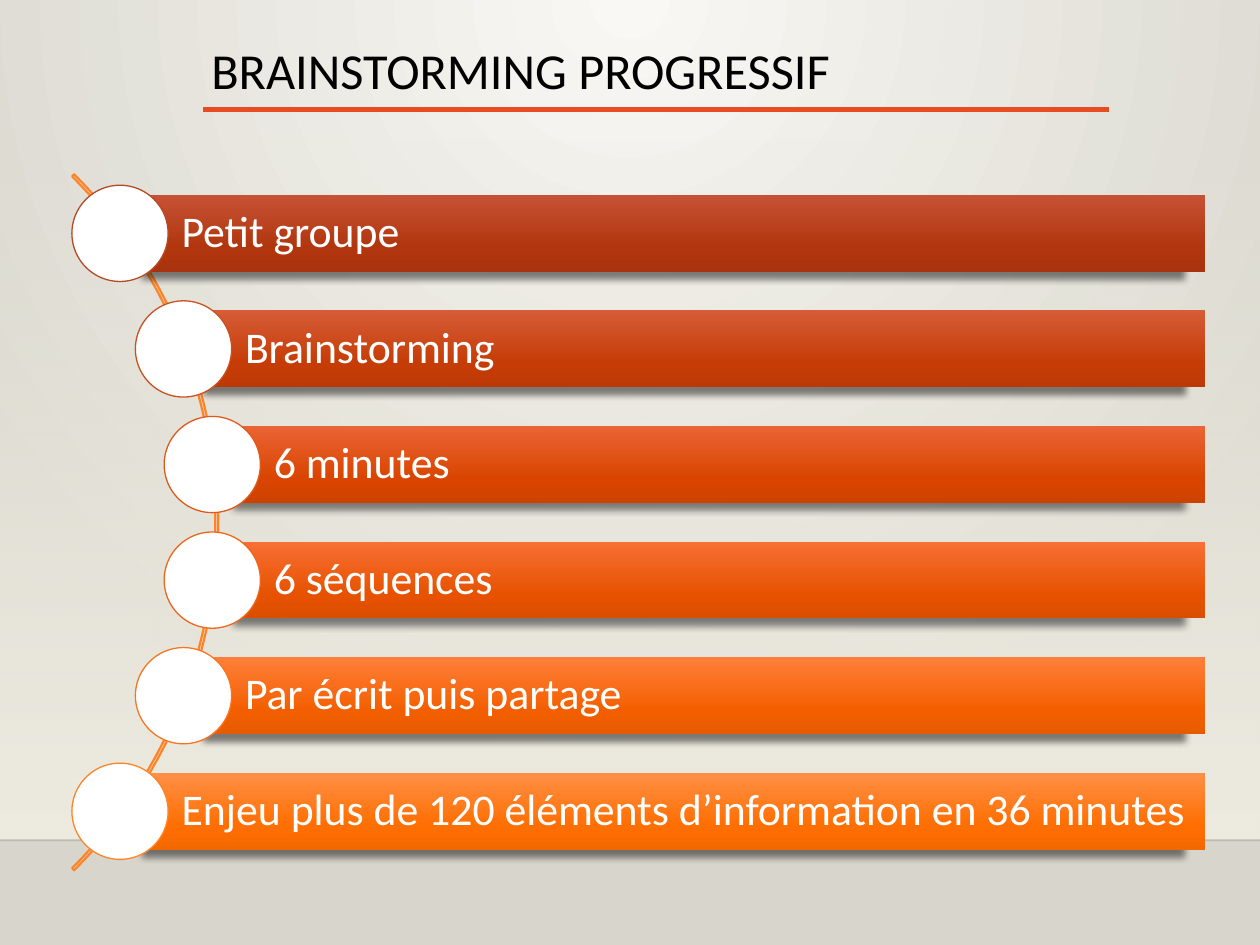
from lxml import etree
from pptx import Presentation
from pptx import util as u
from pptx.dml.color import RGBColor
from pptx.enum import shapes, text
from pptx.oxml import parse_xml
from pptx.oxml.ns import qn, nsdecls

COLOURS = {"white": "FFFFFF", "black": "000000", "rule": "E84C22", "horizon": "000001",
           "glow": "F9F8F5", "edge": "D8D6CC", "wall": "EEECE1", "arc": "FF8427"}
RADIAL = '<a:path path="circle"><a:fillToRect l="43000" r="43000" b="100000"/></a:path>'
DOWN = '<a:lin ang="5400000" scaled="0"/>'


def set_gradient(properties, stops, direction):
    """Swap the empty fill for a gradient of (position, colour, opacity) stops."""
    steps = "".join(
        f'<a:gs pos="{pos * 1000}"><a:srgbClr val="{colour}">'
        f'<a:alpha val="{opacity * 1000}"/></a:srgbClr></a:gs>'
        for pos, colour, opacity in stops)
    gradient = parse_xml(f'<a:gradFill {nsdecls("a")} rotWithShape="1">'
                         f'<a:gsLst>{steps}</a:gsLst>{direction}</a:gradFill>')
    properties.replace(properties.find(qn("a:noFill")), gradient)


def write(frame, words, size, colour, insets):
    """Put one left-aligned, vertically centred line into a text frame."""
    layout = {"word_wrap": True, "auto_size": text.MSO_AUTO_SIZE.NONE,
              "vertical_anchor": text.MSO_ANCHOR.MIDDLE}
    sides = ("margin_left", "margin_top", "margin_right", "margin_bottom")
    layout.update(zip(sides, map(u.Cm, insets)))
    for key, value in layout.items():
        setattr(frame, key, value)
    line = frame.paragraphs[0]
    line.text = words
    line.alignment = text.PP_ALIGN.LEFT
    line.line_spacing = 0.9
    for key, value in {"name": "Calibri", "size": u.Pt(size), "bold": False}.items():
        setattr(line.font, key, value)
    line.font.color.rgb = RGBColor.from_string(COLOURS[colour])


prs = Presentation()
prs.slide_width, prs.slide_height = u.Cm(25.4), u.Cm(19.05)
slide = prs.slides.add_slide(prs.slide_layouts[5])

# Background
slide.background.fill.background()
set_gradient(slide._element.find(".//" + qn("p:bgPr")),
             [(0, COLOURS["glow"], 100), (100, COLOURS["edge"], 100)], RADIAL)
wall = slide.shapes.add_shape(shapes.MSO_SHAPE.RECTANGLE, 0, u.Cm(2.77), u.Cm(25.4), u.Cm(14.17))
wall.shadow.inherit = False
wall.line.fill.background()
wall.fill.background()
set_gradient(wall._element.spPr, [(0, COLOURS["wall"], 0), (100, COLOURS["wall"], 100)], DOWN)

# Horizon and title rule
for colour, left, right, y, weight in [("horizon", 0, 25.4, 16.94, 1),
                                       ("rule", 4.1, 22.35, 2.21, 2.5)]:
    rule = slide.shapes.add_connector(shapes.MSO_CONNECTOR.STRAIGHT,
                                      u.Cm(left), u.Cm(y), u.Cm(right), u.Cm(y))
    rule.line.color.rgb = RGBColor.from_string(COLOURS[colour])
    rule.line.width = u.Pt(weight)
    if colour == "horizon":
        tint = rule._element.spPr.find(".//" + qn("a:srgbClr"))
        etree.SubElement(tint, qn("a:alpha")).set("val", "20000")
    etree.SubElement(rule._element.spPr, qn("a:effectLst"))

# Title
title = slide.shapes.title
for key, value in {"left": 4.01, "top": 0.76, "width": 18.26, "height": 1.45}.items():
    setattr(title, key, u.Cm(value))
write(title.text_frame, "BRAINSTORMING PROGRESSIF", 28.8, "black", (0.25, 0.13, 0.25, 0.13))

# Arc behind the steps
arc = slide.shapes.add_shape(shapes.MSO_SHAPE.BLOCK_ARC,
                             u.Cm(-15.44), u.Cm(0.61), u.Cm(19.84), u.Cm(19.84))
for index, value in enumerate((189, 27, 0.003)):
    arc.adjustments[index] = value
arc.shadow.inherit = False
arc.fill.background()
arc.line.color.rgb = RGBColor.from_string(COLOURS["arc"])
arc.line.width = u.Pt(1.25)

# Steps: wording, bar left, gradient colours, circle outline
steps = [
    ("Petit groupe", 2.42, ("C65235", "B1360E", "A8330E"), "B64926"),
    ("Brainstorming", 3.7, ("D55C37", "C63C06", "BC3906"), "CA5020"),
    ("6 minutes", 4.28, ("EA6435", "D94500", "CE4200"), "E0591A"),
    ("6 séquences", 4.28, ("F87035", "E65200", "DA4E00"), "EE661A"),
    ("Par écrit puis partage", 3.7, ("FF7F3A", "F35F00", "E75B00"), "F77520"),
    ("Enjeu plus de 120 éléments d’information en 36 minutes", 2.42,
     ("FF9046", "FF6E01", "F36900"), "FF8427"),
]
BAR_RIGHT, BAR_HEIGHT, FIRST_TOP, PITCH, DIAMETER = 24.29, 1.55, 3.93, 2.33, 1.94

for row, (words, left, shades, outline) in enumerate(steps):
    top = FIRST_TOP + row * PITCH
    bar = slide.shapes.add_shape(shapes.MSO_SHAPE.RECTANGLE, u.Cm(left), u.Cm(top),
                                 u.Cm(BAR_RIGHT - left), u.Cm(BAR_HEIGHT))
    bar.line.fill.background()
    bar.fill.background()
    set_gradient(bar._element.spPr, [(pos, shade, 100) for pos, shade in zip((0, 69, 100), shades)],
                 DOWN)
    bar.shadow.inherit = False
    bar._element.spPr.find(qn("a:effectLst")).append(parse_xml(
        f'<a:outerShdw {nsdecls("a")} blurRad="50800" dist="50800" dir="5400000" sx="96000" '
        f'sy="96000" rotWithShape="0"><a:srgbClr val="{COLOURS["black"]}">'
        '<a:alpha val="48000"/></a:srgbClr></a:outerShdw>'))
    write(bar.text_frame, words, 25, "white", (1.24, 0.18, 0.18, 0.18))

    circle = slide.shapes.add_shape(
        shapes.MSO_SHAPE.OVAL, u.Cm(left - DIAMETER / 2), u.Cm(top - (DIAMETER - BAR_HEIGHT) / 2),
        u.Cm(DIAMETER), u.Cm(DIAMETER))
    circle.shadow.inherit = False
    circle.fill.solid()
    circle.fill.fore_color.rgb = RGBColor.from_string(COLOURS["white"])
    circle.line.color.rgb = RGBColor.from_string(outline)
    circle.line.width = u.Pt(0.75)

prs.save("out.pptx")
